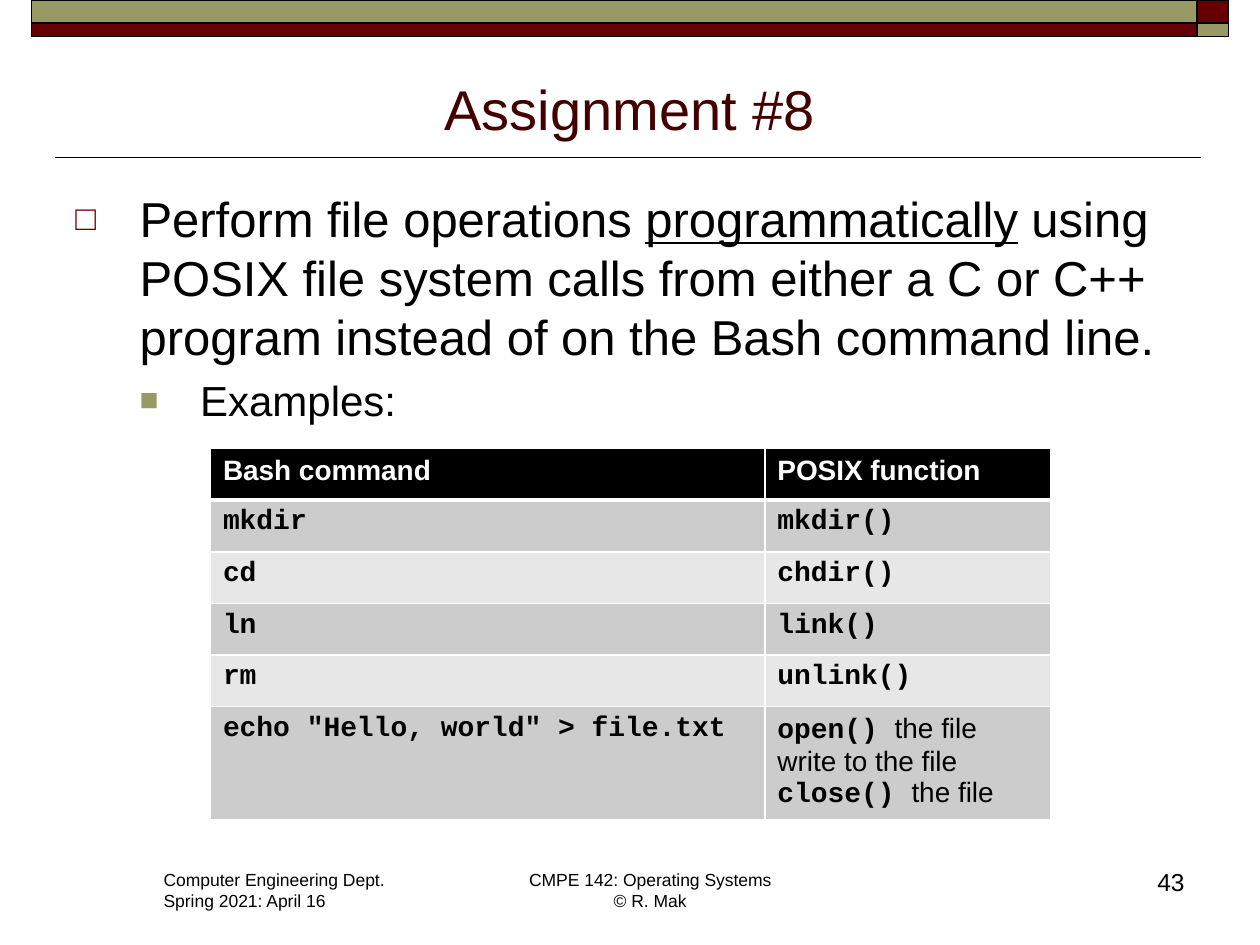
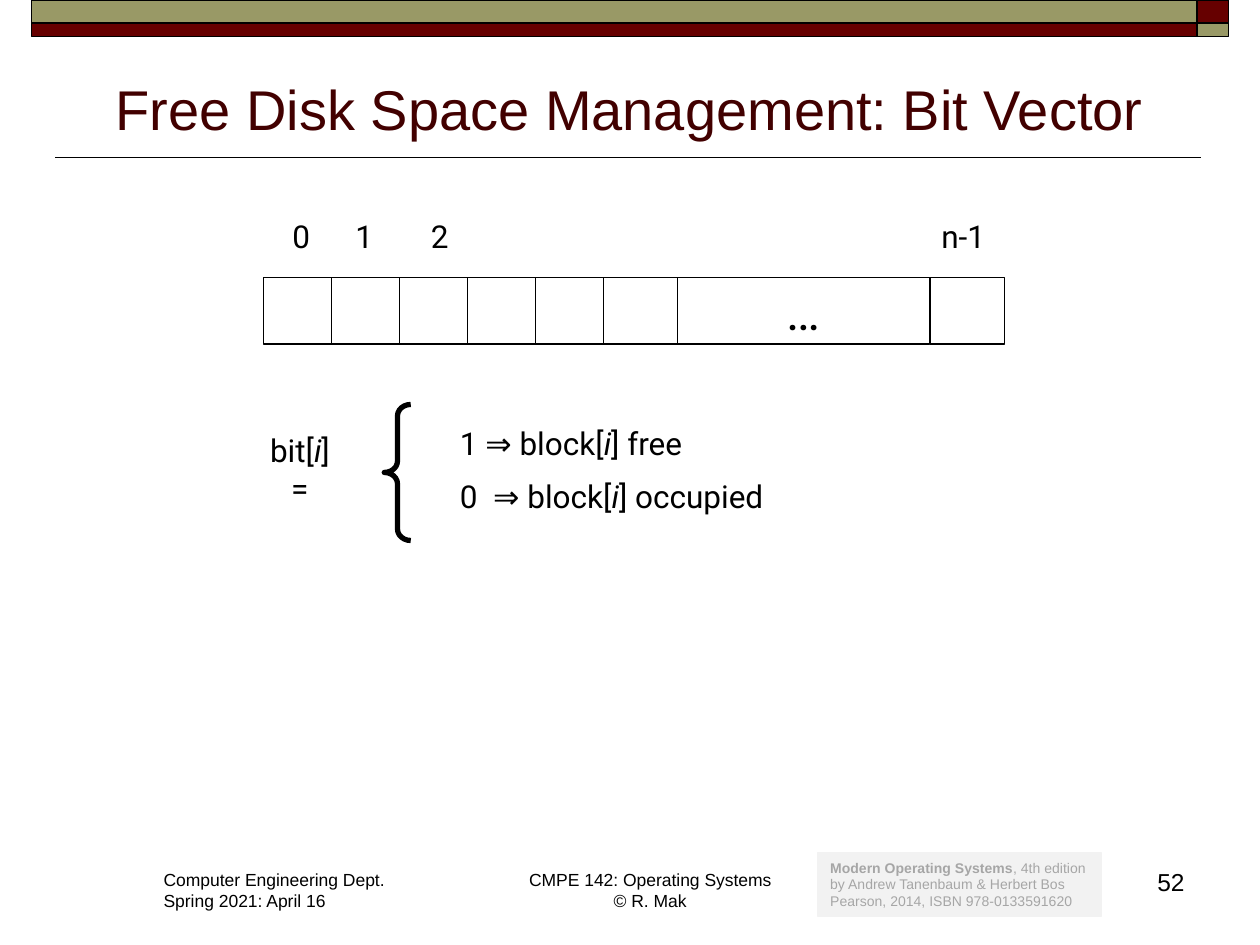
import enum
import pptx
import pptx.dml.color
import pptx.enum.shapes
import pptx.enum.text
import pptx.oxml
import pptx.oxml.ns
import pptx.util
import lxml.etree

PX = 9144
SHAPE = pptx.enum.shapes.MSO_SHAPE
ALIGN = pptx.enum.text.PP_ALIGN
ANCHOR = pptx.enum.text.MSO_ANCHOR
DRAWING = pptx.oxml.ns.nsuri("a")


class Theme:
    maroon, olive, title = "660000", "999966", "420000"
    black, white = "000000", "FFFFFF"
    band_dark, band_light = "CCCCCC", "E7E7E7"
    note_fill, note_text = "F2F2F2", "A6A6A6"
    sans, mono, diagram = "Arial", "Courier New", "Roboto"
    title_size, body_size, example_size = 32, 28, 24
    table_size, label_size, dots_size = 16, 18, 29
    footer_size, number_size, note_size = 10, 14, 8


def write(frame, text, size, color=Theme.black, font=Theme.sans, bold=False, accent=None,
          align=ALIGN.LEFT, anchor=ANCHOR.TOP, before=0, wrap=True, inset=None):
    frame.word_wrap = wrap
    frame.vertical_anchor = anchor
    if inset:
        frame.margin_left = frame.margin_right = inset[0] * PX
        frame.margin_top = frame.margin_bottom = inset[1] * PX
    for row, line in enumerate(text.split("\n")):
        para = frame.add_paragraph() if row else frame.paragraphs[0]
        para.alignment = align
        para.space_before = pptx.util.Pt(before if row else 0)
        for part, words in enumerate(line.split("|")):
            if words:
                span = para.add_run()
                span.text = words
                span.font.size = pptx.util.Pt(size)
                span.font.name = font
                span.font.bold = bold
                span.font.color.rgb = pptx.dml.color.RGBColor.from_string(color)
                if part % 2:
                    for name, value in accent.items():
                        setattr(span.font, name, value)


def add_box(page, x, y, width, height, fill=None, line=None, weight=1, kind=None):
    area = [side * PX for side in (x, y, width, height)]
    if kind is None:
        return page.shapes.add_textbox(*area)
    box = page.shapes.add_shape(kind, *area)
    box.shadow.inherit = False
    if fill:
        box.fill.solid()
        box.fill.fore_color.rgb = pptx.dml.color.RGBColor.from_string(fill)
    else:
        box.fill.background()
    box.line.color.rgb = pptx.dml.color.RGBColor.from_string(line)
    box.line.width = pptx.util.Pt(weight)
    return box


deck = pptx.Presentation()
deck.slide_width, deck.slide_height = 1000 * PX, 750 * PX

pages = []
for title, number in (("Assignment #8", "43"), ("Free Disk Space Management: Bit Vector", "52")):
    page = deck.slides.add_slide(deck.slide_layouts[6])
    pages.append(page)

    rule = page.shapes.add_connector(pptx.enum.shapes.MSO_CONNECTOR.STRAIGHT,
                                     953 * PX, 125 * PX, 44 * PX, 125 * PX)
    rule.line.color.rgb = pptx.dml.color.RGBColor.from_string(Theme.black)
    rule.line.width = pptx.util.Pt(1)
    lxml.etree.SubElement(rule._element.spPr, f"{{{DRAWING}}}effectLst")

    for y, height, band, corner in ((0, 18, Theme.olive, Theme.maroon),
                                    (18, 11, Theme.maroon, Theme.olive)):
        for x, width, fill in ((25, 925, band), (950, 25, corner)):
            add_box(page, x, y, width, height, fill, Theme.black, kind=SHAPE.RECTANGLE)

    for x, width, text, align in (
            (120, 198, "Computer Engineering Dept.\nSpring 2021: April 16", ALIGN.LEFT),
            (407, 218, "CMPE 142: Operating Systems\n© R. Mak", ALIGN.CENTER)):
        footer = add_box(page, x, 685, width, 44)
        write(footer.text_frame, text, Theme.footer_size, align=align, wrap=False)

    heading = add_box(page, 50, 45, 900, 72)
    write(heading.text_frame, title, Theme.title_size, Theme.title,
          align=ALIGN.CENTER, anchor=ANCHOR.BOTTOM)
    page_number = add_box(page, 870, 683, 80, 50)
    write(page_number.text_frame, number, Theme.number_size, align=ALIGN.RIGHT)

assignment, bit_vector = pages

body = add_box(assignment, 50, 145, 900, 200)
write(body.text_frame,
      "Perform file operations |programmatically| using POSIX file system calls "
      "from either a C or C++ program instead of on the Bash command line.\nExamples:",
      Theme.body_size, accent={"underline": True}, before=5)
task, examples = body.text_frame.paragraphs
examples.level = 1
examples.runs[0].font.size = pptx.util.Pt(Theme.example_size)
for para, left, hang, color, percent, symbol in (
        (task, 51, 51, Theme.maroon, 70, "□"), (examples, 99, 48, Theme.olive, 75, "■")):
    properties = para._p.get_or_add_pPr()
    properties.set("marL", str(left * PX))
    properties.set("indent", str(-hang * PX))
    for bullet in (f'<a:buClr xmlns:a="{DRAWING}"><a:srgbClr val="{color}"/></a:buClr>',
                   f'<a:buSzPct xmlns:a="{DRAWING}" val="{percent * 1000}"/>',
                   f'<a:buFont xmlns:a="{DRAWING}" typeface="{Theme.sans}"/>',
                   f'<a:buChar xmlns:a="{DRAWING}" char="{symbol}"/>'):
        properties.append(pptx.oxml.parse_xml(bullet))

commands = (
    ("Bash command", "POSIX function"),
    ("|mkdir", "|mkdir()"),
    ("|cd", "|chdir()"),
    ("|ln", "|link()"),
    ("|rm", "|unlink()"),
    ('|echo "Hello, world" > file.txt', "|open() |the file\nwrite to the file\n|close() |the file"),
)
table = assignment.shapes.add_table(len(commands), 2, 167 * PX, 356 * PX, 667 * PX, 292 * PX).table
table.horz_banding = False
for column, width in zip(table.columns, (440, 227)):
    column.width = width * PX
for index, texts in enumerate(commands):
    header = index == 0
    table.rows[index].height = (87 if index == len(commands) - 1 else 41) * PX
    fill = Theme.black if header else (Theme.band_light, Theme.band_dark)[index % 2]
    for cell, text in zip(table.rows[index].cells, texts):
        write(cell.text_frame, text, Theme.table_size, Theme.white if header else Theme.black,
              bold=header, accent={"name": Theme.mono, "bold": True})
        properties = cell._tc.get_or_add_tcPr()
        for side in "LRTB":
            thick = (header and side == "B") or (index == 1 and side == "T")
            weight = pptx.util.Pt(3 if thick else 1)
            properties.append(pptx.oxml.parse_xml(
                f'<a:ln{side} xmlns:a="{DRAWING}" w="{weight}"><a:solidFill>'
                f'<a:srgbClr val="{Theme.white}"/></a:solidFill></a:ln{side}>'))
        cell.fill.solid()
        cell.fill.fore_color.rgb = pptx.dml.color.RGBColor.from_string(fill)

diagram = {"font": Theme.diagram, "anchor": ANCHOR.MIDDLE, "inset": (14, 7)}
bits = [(209 + 54 * index, 59, "") for index in range(6)] + [(538, 200, "…"), (738, 59, "")]
for x, width, text in bits:
    bit = add_box(bit_vector, x, 220, width, 53, Theme.white, Theme.black, 0.75, SHAPE.RECTANGLE)
    if text:
        write(bit.text_frame, text, Theme.dots_size, align=ALIGN.CENTER, wrap=False, **diagram)

for x, width, text in ((218, 42, "0"), (268, 42, "1"), (328, 42, "2"), (732, 65, "n-1")):
    label = add_box(bit_vector, x, 165, width, 44)
    write(label.text_frame, text, Theme.label_size, align=ALIGN.CENTER, wrap=False, **diagram)

italic = {"italic": True}
subject = add_box(bit_vector, 192, 335, 92, 74)
write(subject.text_frame, "bit[|i|] =", Theme.label_size, accent=italic,
      align=ALIGN.CENTER, **diagram)
meanings = add_box(bit_vector, 351, 328, 273, 89)
write(meanings.text_frame, "1 ⇒ block[|i|] free\n0  ⇒ block[|i|] occupied", Theme.label_size,
      accent=italic, before=9, wrap=False, **diagram)
brace = add_box(bit_vector, 305, 321, 21, 108, None, Theme.black, 3, SHAPE.LEFT_BRACE)
brace.adjustments[0] = 0.43

reference = add_box(bit_vector, 649, 677, 225, 50, Theme.note_fill, Theme.note_fill, 0.75,
                    SHAPE.RECTANGLE)
write(reference.text_frame,
      "|Modern Operating Systems|, 4th edition\nby Andrew Tanenbaum & Herbert Bos\n"
      "Pearson, 2014, ISBN 978-0133591620",
      Theme.note_size, Theme.note_text, accent={"bold": True})

deck.save("out.pptx")
